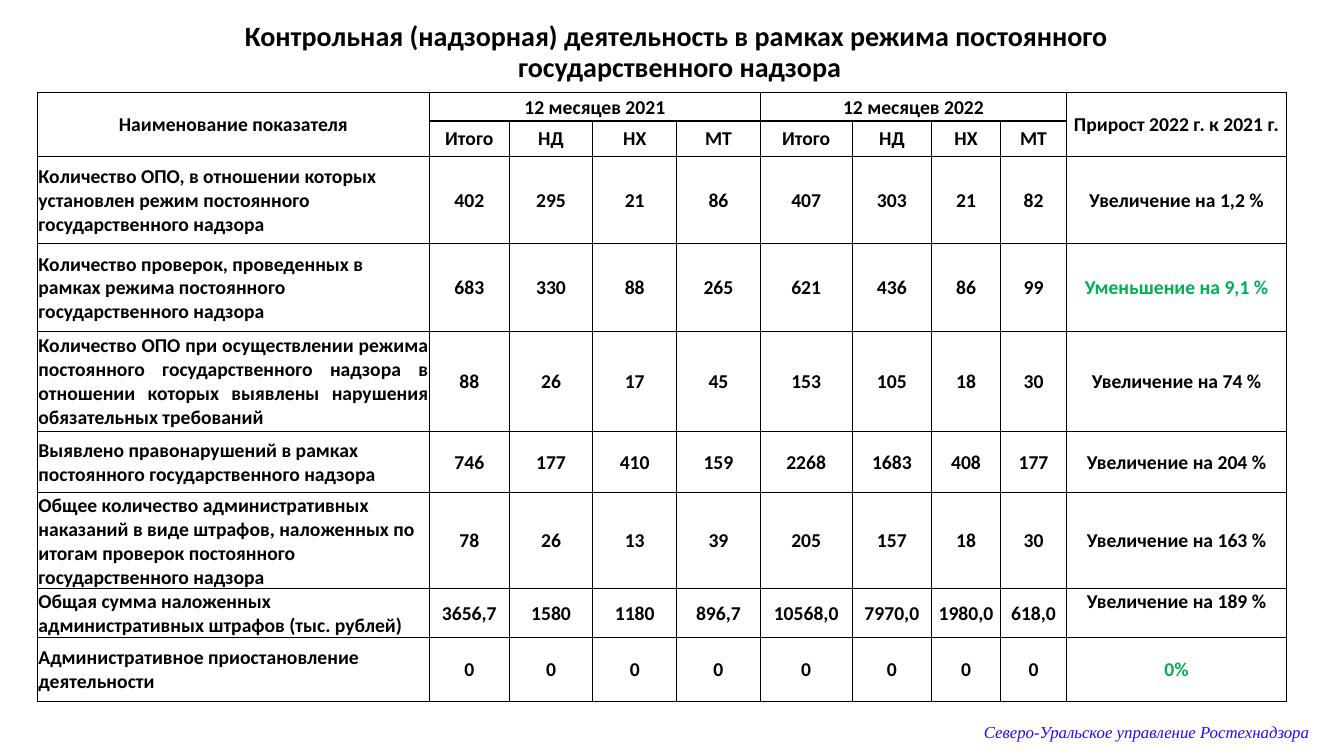
from dataclasses import dataclass

from lxml.etree import SubElement
from pptx import Presentation
from pptx.dml.color import RGBColor
from pptx.enum.text import MSO_ANCHOR as Anchor, PP_ALIGN as Align
from pptx.oxml.ns import qn
from pptx.util import Inches, Length, Pt

BLACK = RGBColor(0x00, 0x00, 0x00)
GREEN = RGBColor(0x00, 0xB0, 0x50)
BLUE = RGBColor(0x31, 0x03, 0xF7)

SLIDE_WIDTH, SLIDE_HEIGHT = Inches(13.33), Inches(7.5)
GRID = 100  # the slide is a grid of 100 columns by 100 rows

COLUMN_SPANS = (29.18, 5.93, 6.23, 6.23, 6.23, 6.83, 5.93, 5.1, 4.95, 16.35)
ROW_SPANS = (3.73, 4.67, 11.6, 11.6, 13.2, 8.13, 12.67, 6.53, 8.4)
BRANCHES = ("Итого", "НД", "НХ", "МТ")
HEADER_ROWS = 2
CELL_INSET = 0.08


@dataclass(frozen=True)
class Area:
    left: float
    top: float
    width: float
    height: float


@dataclass(frozen=True)
class Style:
    size: float
    font: str = "Calibri"
    color: RGBColor = BLACK
    bold: bool = True
    italic: bool = False


@dataclass(frozen=True)
class Caption:
    text: str
    area: Area
    style: Style
    align: Align
    line_spacing: float = 1.0


@dataclass(frozen=True)
class Header:
    text: str
    row: int
    column: int
    last_row: int
    last_column: int


@dataclass(frozen=True)
class Indicator:
    name: str
    values_2021: tuple[str, ...]
    values_2022: tuple[str, ...]
    growth: str
    growth_color: RGBColor = BLACK
    name_align: Align = Align.LEFT
    growth_anchor: Anchor = Anchor.MIDDLE


CAPTIONS = (
    Caption("Контрольная (надзорная) деятельность в рамках режима постоянного \v"
            "государственного надзора",
            Area(5.33, 1.73, 90.47, 10.53), Style(20), Align.CENTER, 0.9),
    Caption("Северо-Уральское управление Ростехнадзора",
            Area(72.47, 93.47, 26.41, 6.67),
            Style(12, "Times New Roman", BLUE, bold=False, italic=True), Align.LEFT),
)

HEADERS = (
    Header("Наименование показателя", 0, 0, 1, 0),
    Header("12 месяцев 2021", 0, 1, 0, 4),
    Header("12 месяцев 2022", 0, 5, 0, 8),
    Header("Прирост 2022 г. к 2021 г.", 0, 9, 1, 9),
)

INDICATORS = (
    Indicator("Количество ОПО, в отношении которых установлен режим постоянного "
              "государственного надзора",
              ("402", "295", "21", "86"), ("407", "303", "21", "82"),
              "Увеличение на 1,2 %"),
    Indicator("Количество проверок, проведенных в рамках режима постоянного "
              "государственного надзора",
              ("683", "330", "88", "265"), ("621", "436", "86", "99"),
              "Уменьшение на 9,1 %", GREEN),
    Indicator("Количество ОПО при осуществлении режима постоянного государственного "
              "надзора в отношении которых выявлены нарушения обязательных требований",
              ("88", "26", "17", "45"), ("153", "105", "18", "30"),
              "Увеличение на 74 %", name_align=Align.JUSTIFY),
    Indicator("Выявлено правонарушений в рамках постоянного государственного надзора",
              ("746", "177", "410", "159"), ("2268", "1683", "408", "177"),
              "Увеличение на 204 %"),
    Indicator("Общее количество административных наказаний в виде штрафов, наложенных "
              "по итогам проверок постоянного государственного надзора",
              ("78", "26", "13", "39"), ("205", "157", "18", "30"),
              "Увеличение на 163 %"),
    Indicator("Общая сумма наложенных административных штрафов (тыс. рублей)",
              ("3656,7", "1580", "1180", "896,7"),
              ("10568,0", "7970,0", "1980,0", "618,0"),
              "Увеличение на 189 %", growth_anchor=Anchor.TOP),
    Indicator("Административное приостановление деятельности",
              ("0",) * 4, ("0",) * 4, "0%", GREEN),
)


def columns(count: float) -> Length:
    return Length(round(SLIDE_WIDTH * count / GRID))


def rows(count: float) -> Length:
    return Length(round(SLIDE_HEIGHT * count / GRID))


def place(area: Area) -> tuple[Length, ...]:
    return columns(area.left), rows(area.top), columns(area.width), rows(area.height)


def write(frame, text: str, style: Style, align: Align, line_spacing: float = 1.0) -> None:
    paragraph = frame.paragraphs[0]
    paragraph.text = text
    paragraph.alignment = align
    paragraph.line_spacing = line_spacing
    for run in paragraph.runs:
        font = run.font
        font.name, font.size = style.font, Pt(style.size)
        font.bold, font.italic = style.bold, style.italic
        font.color.rgb = style.color


def draw_caption(slide, caption: Caption) -> None:
    frame = slide.shapes.add_textbox(*place(caption.area)).text_frame
    frame.word_wrap = True
    frame.vertical_anchor = Anchor.MIDDLE
    write(frame, caption.text, caption.style, caption.align, caption.line_spacing)


def outline_cell(cell) -> None:
    cell.fill.background()
    cell.margin_left = cell.margin_right = cell.margin_top = columns(CELL_INSET)
    cell.margin_bottom = 0
    properties = cell._tc.get_or_add_tcPr()
    for position, side in enumerate(("lnL", "lnR", "lnT", "lnB")):
        border = SubElement(properties, qn(f"a:{side}"), w=str(Pt(1)))
        fill = SubElement(border, qn("a:solidFill"))
        SubElement(fill, qn("a:srgbClr"), val=str(BLACK))
        properties.insert(position, border)


def fill_cell(cell, text: str, align: Align = Align.CENTER,
              color: RGBColor = BLACK, anchor: Anchor = Anchor.MIDDLE) -> None:
    cell.vertical_anchor = anchor
    write(cell.text_frame, text, Style(14, color=color), align)


def draw_table(slide) -> None:
    area = Area(2.78, 12.27, sum(COLUMN_SPANS), sum(ROW_SPANS))
    table = slide.shapes.add_table(len(ROW_SPANS), len(COLUMN_SPANS), *place(area)).table
    table.first_row = table.horz_banding = False
    for column, span in zip(table.columns, COLUMN_SPANS):
        column.width = columns(span)
    for row, span in zip(table.rows, ROW_SPANS):
        row.height = rows(span)
    for cell in table.iter_cells():
        outline_cell(cell)

    # Header: merged titles above the branches of each year
    for header in HEADERS:
        corner = table.cell(header.row, header.column)
        corner.merge(table.cell(header.last_row, header.last_column))
        fill_cell(corner, header.text)
    for column, branch in enumerate(BRANCHES * 2, start=1):
        fill_cell(table.cell(1, column), branch)

    # Body: one row for each indicator
    for row, indicator in enumerate(INDICATORS, start=HEADER_ROWS):
        fill_cell(table.cell(row, 0), indicator.name, indicator.name_align)
        values = indicator.values_2021 + indicator.values_2022
        for column, value in enumerate(values, start=1):
            fill_cell(table.cell(row, column), value)
        fill_cell(table.cell(row, len(values) + 1), indicator.growth,
                  color=indicator.growth_color, anchor=indicator.growth_anchor)


def main() -> None:
    deck = Presentation()
    deck.slide_width, deck.slide_height = SLIDE_WIDTH, SLIDE_HEIGHT
    slide = deck.slides.add_slide(deck.slide_layouts[6])
    for caption in CAPTIONS:
        draw_caption(slide, caption)
    draw_table(slide)
    deck.save("out.pptx")


if __name__ == "__main__":
    main()
